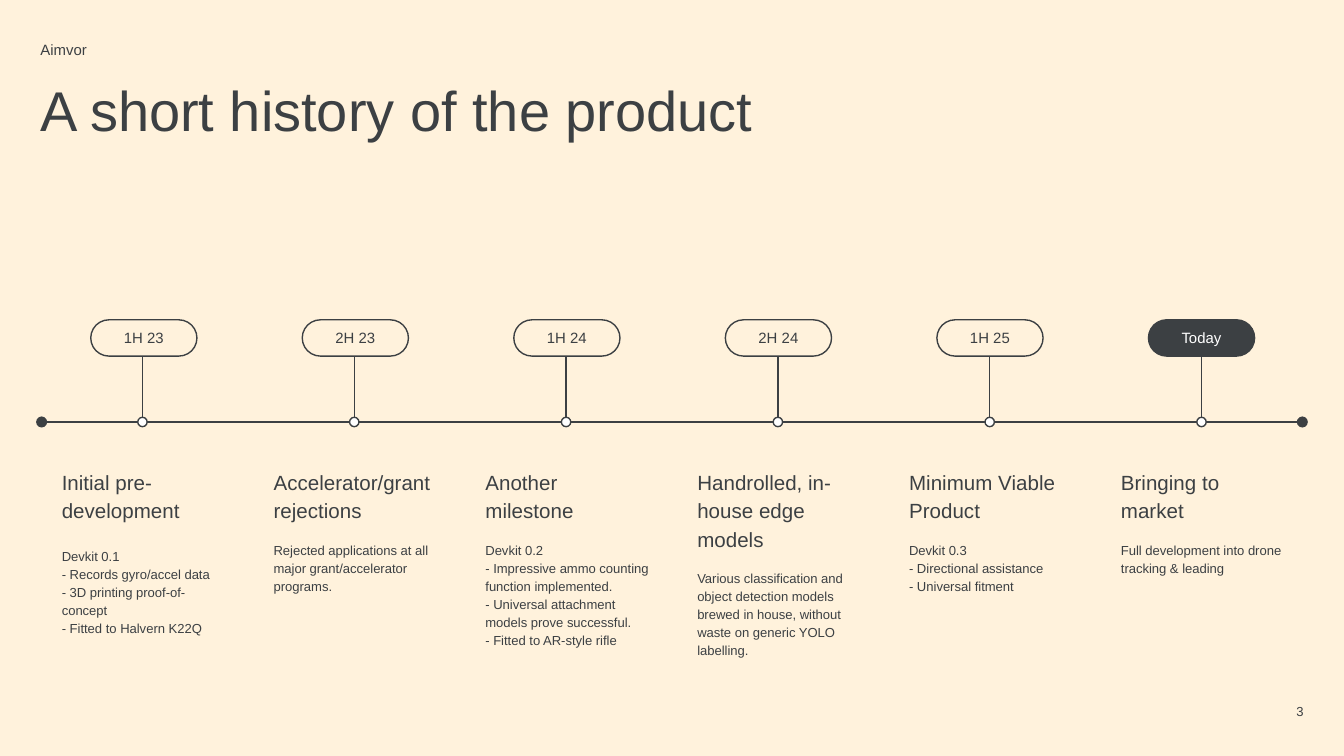
from dataclasses import dataclass

from lxml.etree import SubElement
from pptx import Presentation
from pptx.dml.color import RGBColor
from pptx.enum.shapes import MSO_CONNECTOR, MSO_SHAPE
from pptx.enum.text import MSO_ANCHOR, PP_ALIGN
from pptx.oxml.ns import qn
from pptx.util import Inches, Pt

COLORS = {"cream": "FFF2DC", "ink": "3C4043", "white": "FFFFFF"}
FONT = "Arial"
WIDTH = 10
HEIGHT = WIDTH * 9 / 16

# Timeline grid, in inches
FIRST_CENTER, LAST_CENTER = 1.06, 8.94
FIRST_PILL = 1.07
AXIS_Y = 3.14
AXIS_LEFT, AXIS_RIGHT = 0.31, 9.69
PILL_TOP, PILL_WIDTH, PILL_HEIGHT = 2.38, 0.79, 0.27
DOT = 0.07
CARD_TOP, CARD_WIDTH, CARD_HEIGHT = 3.47, 1.52, 1.49


@dataclass
class Milestone:
    date: str
    heading: str
    details: list[str]
    gap: float = 9.25
    current: bool = False


MILESTONES = [
    Milestone("1H 23", "Initial pre-development",
              ["Devkit 0.1", "- Records gyro/accel data",
               "- 3D printing proof-of-concept", "- Fitted to Halvern K22Q"], gap=12.65),
    Milestone("2H 23", "Accelerator/grant rejections",
              ["Rejected applications at all major grant/accelerator programs."]),
    Milestone("1H 24", "Another milestone",
              ["Devkit 0.2", "- Impressive ammo counting function implemented.",
               "- Universal attachment models prove successful.",
               "- Fitted to AR-style rifle"]),
    Milestone("2H 24", "Handrolled, in-house edge models",
              ["Various classification and object detection models brewed in house, "
               "without waste on generic YOLO labelling."]),
    Milestone("1H 25", "Minimum Viable Product",
              ["Devkit 0.3", "- Directional assistance", "- Universal fitment"]),
    Milestone("Today", "Bringing to market",
              ["Full development into drone tracking & leading"], current=True),
]
STEPS = len(MILESTONES) - 1
COLUMN = (LAST_CENTER - FIRST_CENTER) / STEPS
PILL_COLUMN = (LAST_CENTER - FIRST_PILL) / STEPS


def color(name: str) -> RGBColor:
    return RGBColor.from_string(COLORS[name])


def add_span(para, text: str, size: float, ink: str = "ink") -> None:
    span = para.add_run()
    span.text = text
    span.font.name = FONT
    span.font.size = Pt(size)
    span.font.color.rgb = color(ink)


def set_frame(shape, insets: tuple[float, float, float, float], anchor=MSO_ANCHOR.TOP):
    frame = shape.text_frame
    frame.word_wrap = True
    frame.vertical_anchor = anchor
    frame.margin_left, frame.margin_top, frame.margin_right, frame.margin_bottom = map(
        Inches, insets)
    return frame


def add_box(page, left: float, top: float, width: float, height: float,
            insets: tuple[float, float, float, float], anchor=MSO_ANCHOR.TOP):
    box = page.shapes.add_textbox(Inches(left), Inches(top), Inches(width), Inches(height))
    return set_frame(box, insets, anchor)


def add_line(page, x1: float, y1: float, x2: float, y2: float, ends: bool = False) -> None:
    line = page.shapes.add_connector(
        MSO_CONNECTOR.STRAIGHT, Inches(x1), Inches(y1), Inches(x2), Inches(y2))
    line.line.color.rgb = color("ink")
    line.line.width = Pt(0.75)
    if ends:
        outline = line.line._get_or_add_ln()
        for tag in ("a:headEnd", "a:tailEnd"):
            SubElement(outline, qn(tag), type="oval", w="med", len="med")
    SubElement(line._element.spPr, qn("a:effectLst"))


def add_shape(page, kind, center: float, top: float, width: float, height: float, fill: str):
    shape = page.shapes.add_shape(
        kind, Inches(center - width / 2), Inches(top), Inches(width), Inches(height))
    shape.shadow.inherit = False
    shape.fill.solid()
    shape.fill.fore_color.rgb = color(fill)
    shape.line.color.rgb = color("ink")
    shape.line.width = Pt(0.75)
    return shape


def add_card(page, item: Milestone, left: float) -> None:
    frame = add_box(page, left, CARD_TOP, CARD_WIDTH, CARD_HEIGHT, (0.15, 0, 0.15, 0))
    para = frame.paragraphs[0]
    para.line_spacing = 1.15
    add_span(para, item.heading, 11)
    for index, detail in enumerate(item.details):
        para = frame.add_paragraph()
        para.line_spacing = 1.15
        if index == 0:
            para.space_before = Pt(item.gap)
        add_span(para, detail, 7)


def add_marker(page, item: Milestone, center: float, pill_center: float) -> None:
    add_line(page, center, PILL_TOP + PILL_HEIGHT, center, AXIS_Y - DOT / 2)
    pill = add_shape(page, MSO_SHAPE.ROUNDED_RECTANGLE, pill_center, PILL_TOP,
                     PILL_WIDTH, PILL_HEIGHT, "ink" if item.current else "cream")
    pill.adjustments[0] = 0.5
    para = set_frame(pill, (0.1, 0.1, 0.1, 0.1), MSO_ANCHOR.MIDDLE).paragraphs[0]
    para.alignment = PP_ALIGN.CENTER
    add_span(para, item.date, 8, "white" if item.current else "ink")
    add_shape(page, MSO_SHAPE.OVAL, center, AXIS_Y - DOT / 2, DOT, DOT, "white")


def main() -> None:
    deck = Presentation()
    deck.slide_width, deck.slide_height = Inches(WIDTH), Inches(HEIGHT)
    page = deck.slides.add_slide(deck.slide_layouts[6])
    page.background.fill.solid()
    page.background.fill.fore_color.rgb = color("cream")

    # Heading
    label = add_box(page, 0.3, 0.3, 1.78, 0.15, (0, 0, 0, 0))
    add_span(label.paragraphs[0], "Aimvor", 8)
    title = add_box(page, 0.3, 0.46, 9.39, 0.97, (0, 0.1, 0, 0))
    add_span(title.paragraphs[0], "A short history of the product", 30)

    # Timeline
    add_line(page, AXIS_LEFT, AXIS_Y, AXIS_RIGHT, AXIS_Y, ends=True)
    for index, item in enumerate(MILESTONES):
        add_card(page, item, AXIS_LEFT + index * COLUMN)
        add_marker(page, item, FIRST_CENTER + index * COLUMN,
                   FIRST_PILL + index * PILL_COLUMN)

    # Page number
    number = add_box(page, 8.98, 5.19, 0.72, 0.21, (0.1, 0.1, 0, 0.1), MSO_ANCHOR.MIDDLE)
    number.paragraphs[0].alignment = PP_ALIGN.RIGHT
    add_span(number.paragraphs[0], "3", 7)

    deck.save("out.pptx")


if __name__ == "__main__":
    main()
